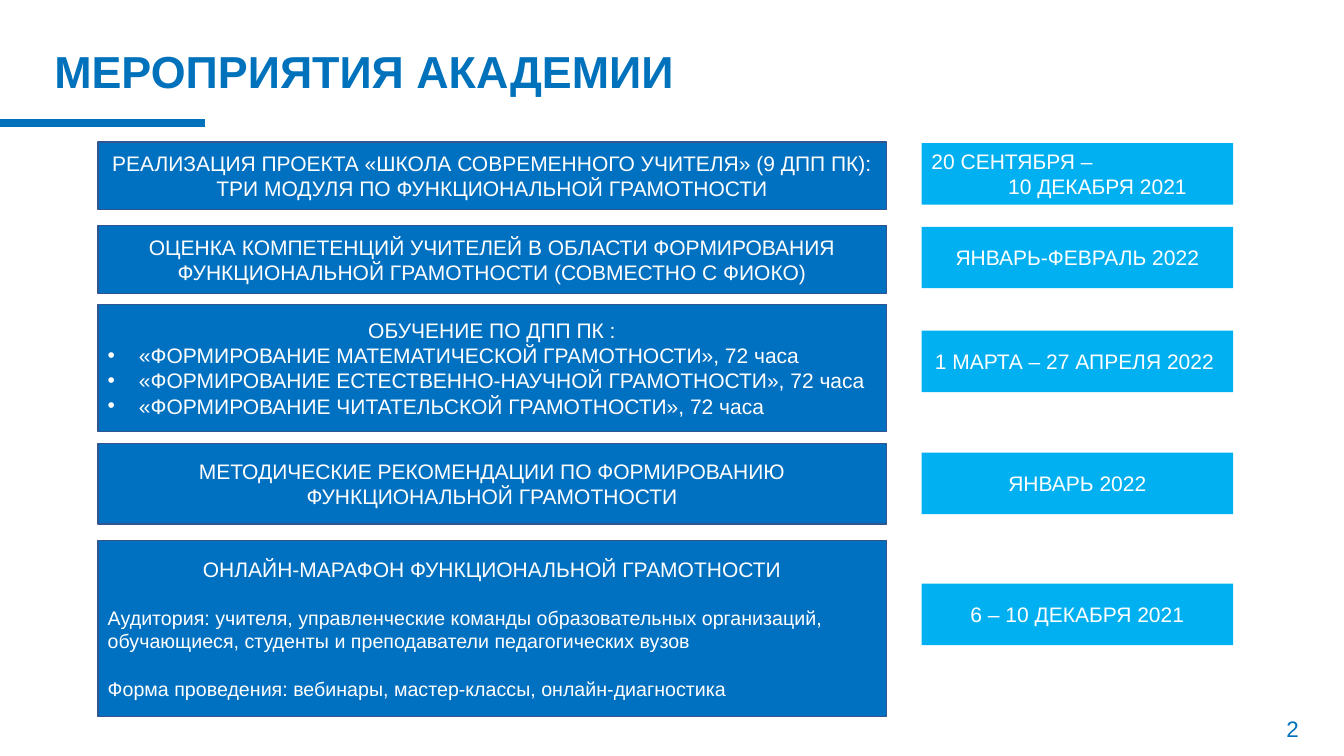
from pptx import Presentation
from pptx.dml.color import RGBColor
from pptx.enum.shapes import MSO_CONNECTOR, MSO_SHAPE
from pptx.enum.text import MSO_ANCHOR, PP_ALIGN
from pptx.oxml.ns import qn
from pptx.util import Inches, Pt
from lxml import etree

LEFT, CENTER = PP_ALIGN.LEFT, PP_ALIGN.CENTER
MIDDLE = MSO_ANCHOR.MIDDLE
RECT, STRAIGHT = MSO_SHAPE.RECTANGLE, MSO_CONNECTOR.STRAIGHT

TITLE = "МЕРОПРИЯТИЯ АКАДЕМИИ"
NUMBER = "2"
ROWS = [
    {"top": 1.41, "height": 0.67, "mark": 1.42,
     "event": [("РЕАЛИЗАЦИЯ ПРОЕКТА «ШКОЛА СОВРЕМЕННОГО УЧИТЕЛЯ» (9 ДПП ПК): "
                "ТРИ МОДУЛЯ ПО ФУНКЦИОНАЛЬНОЙ ГРАМОТНОСТИ", "head")],
     "date": [("20 СЕНТЯБРЯ –", "start"), ("10 ДЕКАБРЯ 2021", "end")]},
    {"top": 2.24, "height": 0.67, "mark": 2.25,
     "event": [("ОЦЕНКА КОМПЕТЕНЦИЙ УЧИТЕЛЕЙ В ОБЛАСТИ ФОРМИРОВАНИЯ "
                "ФУНКЦИОНАЛЬНОЙ ГРАМОТНОСТИ (СОВМЕСТНО С ФИОКО)", "head")],
     "date": [("ЯНВАРЬ-ФЕВРАЛЬ 2022", "head")]},
    {"top": 3.02, "height": 1.26, "mark": 3.28,
     "event": [("ОБУЧЕНИЕ ПО ДПП ПК :", "head"),
               ("«ФОРМИРОВАНИЕ МАТЕМАТИЧЕСКОЙ ГРАМОТНОСТИ», 72 часа", "item"),
               ("«ФОРМИРОВАНИЕ ЕСТЕСТВЕННО-НАУЧНОЙ ГРАМОТНОСТИ», 72 часа", "item"),
               ("«ФОРМИРОВАНИЕ ЧИТАТЕЛЬСКОЙ ГРАМОТНОСТИ», 72 часа", "item")],
     "date": [("1 МАРТА – 27 АПРЕЛЯ 2022 ", "head")]},
    {"top": 4.4, "height": 0.8, "mark": 4.49,
     "event": [("МЕТОДИЧЕСКИЕ РЕКОМЕНДАЦИИ ПО ФОРМИРОВАНИЮ "
                "ФУНКЦИОНАЛЬНОЙ ГРАМОТНОСТИ", "head")],
     "date": [("ЯНВАРЬ 2022", "head")]},
    {"top": 5.36, "height": 1.75, "mark": 5.79,
     "event": [("ОНЛАЙН-МАРАФОН ФУНКЦИОНАЛЬНОЙ ГРАМОТНОСТИ", "head"),
               ("Аудитория: учителя, управленческие команды образовательных "
                "организаций, обучающиеся, студенты и преподаватели "
                "педагогических вузов", "note"),
               ("Форма проведения: вебинары, мастер-классы, "
                "онлайн-диагностика", "note")],
     "date": [("6 – 10 ДЕКАБРЯ 2021", "head")]},
]

THEME = {
    "font": "Arial",
    "brand": RGBColor(0x00, 0x72, 0xBC),
    "event": RGBColor(0x00, 0x70, 0xC0),
    "edge": RGBColor(0x32, 0x54, 0x91),
    "date": RGBColor(0x00, 0xB0, 0xF0),
    "white": RGBColor(0xFF, 0xFF, 0xFF),
    "title": 32, "number": 16, "body": 15, "note": 14,
}
STYLES = {
    "title": {"size": "title", "color": "brand", "bold": True},
    "number": {"size": "number", "color": "brand", "align": CENTER},
    "head": {"align": CENTER},
    "item": {"indent": 0.31, "hang": 0.31, "bullet": "•"},
    "note": {"size": "note", "gap": 17},
    "start": {},
    "end": {"indent": 0.76},
}
EVENT_X, EVENT_W = 0.97, 7.82
DATE_X, DATE_W, DATE_H = 9.14, 3.09, 0.61


def write(shape, lines):
    frame = shape.text_frame
    frame.word_wrap = True
    frame.vertical_anchor = MIDDLE
    for i, (text, kind) in enumerate(lines):
        style = STYLES[kind]
        para = frame.paragraphs[0] if i == 0 else frame.add_paragraph()
        para.alignment = style.get("align", LEFT)
        if "gap" in style:
            para.space_before = Pt(style["gap"])
        props = para._p.get_or_add_pPr()
        if "indent" in style:
            props.set("marL", str(Inches(style["indent"])))
            props.set("indent", str(-Inches(style.get("hang", 0))))
        if "bullet" in style:
            etree.SubElement(props, qn("a:buFont")).set("typeface", THEME["font"])
            etree.SubElement(props, qn("a:buChar")).set("char", style["bullet"])
        run = para.add_run()
        run.text = text
        run.font.name = THEME["font"]
        run.font.size = Pt(THEME[style.get("size", "body")])
        run.font.bold = style.get("bold", False)
        run.font.color.rgb = THEME[style.get("color", "white")]


def label(slide, box, text, kind):
    write(slide.shapes.add_textbox(*map(Inches, box)), [(text, kind)])


def panel(slide, box, lines, fill, edge=None):
    shape = slide.shapes.add_shape(RECT, *map(Inches, box))
    shape.shadow.inherit = False
    shape.fill.solid()
    shape.fill.fore_color.rgb = THEME[fill]
    if edge:
        shape.line.color.rgb = THEME[edge]
        shape.line.width = Pt(1)
    else:
        shape.line.fill.background()
    write(shape, lines)


def main():
    deck = Presentation()
    deck.slide_width, deck.slide_height = Inches(13.33), Inches(7.5)
    slide = deck.slides.add_slide(deck.slide_layouts[6])

    label(slide, (12.42, 7.02, 0.8, 0.41), NUMBER, "number")
    rule = slide.shapes.add_connector(
        STRAIGHT, *map(Inches, (0, 1.22, 2.03, 1.22)))
    rule.line.color.rgb = THEME["brand"]
    rule.line.width = Pt(6)
    etree.SubElement(rule._element.spPr, qn("a:effectLst"))
    label(slide, (0.44, 0.45, 11.97, 0.51), TITLE, "title")

    for row in ROWS:
        panel(slide, (EVENT_X, row["top"], EVENT_W, row["height"]),
              row["event"], "event", "edge")
        panel(slide, (DATE_X, row["mark"], DATE_W, DATE_H),
              row["date"], "date")
    deck.save("out.pptx")


if __name__ == "__main__":
    main()
